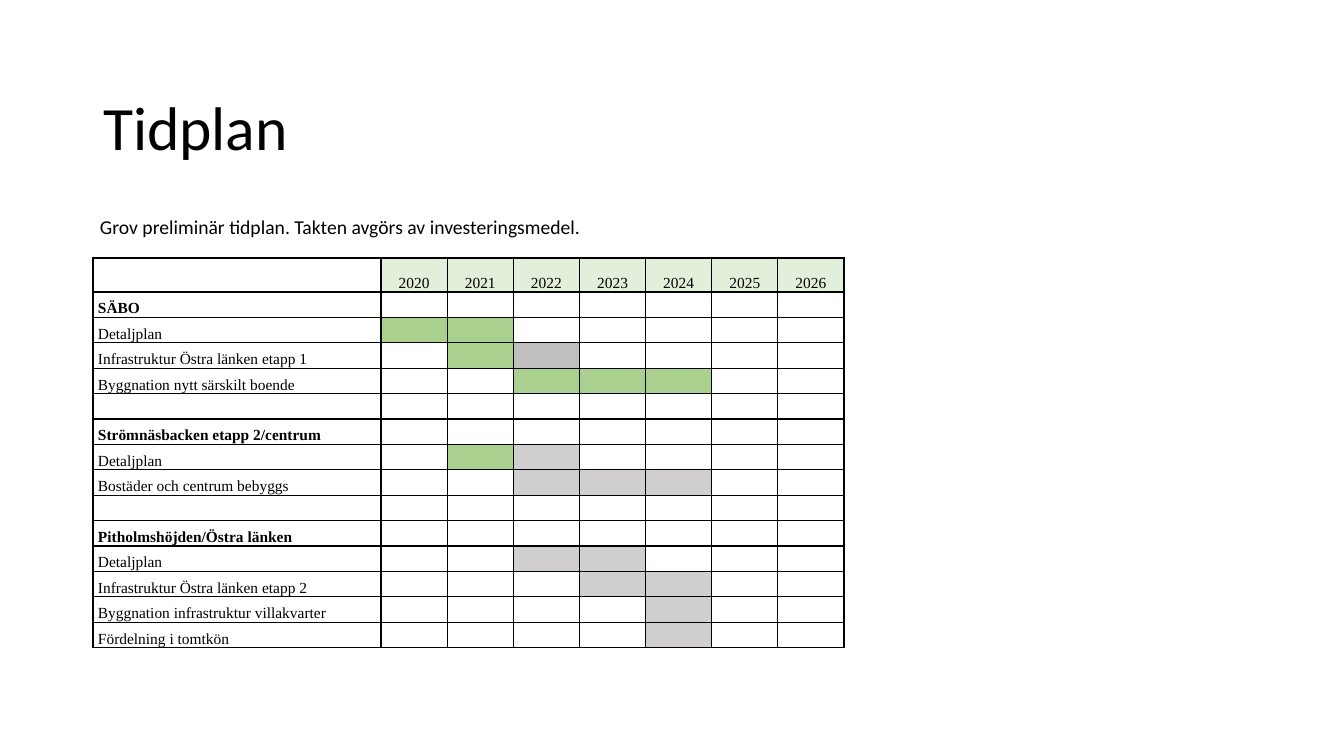
from dataclasses import dataclass

from lxml import etree
from pptx import Presentation
from pptx import util as u
from pptx.dml.color import RGBColor
from pptx.enum import text as t
from pptx.oxml import ns


@dataclass(frozen=True)
class Theme:
    ink: str = "000000"
    header: str = "E2EFDA"
    green: str = "A9D08E"
    gray: str = "BFBFBF"
    light: str = "D0CECE"
    sans: str = "Calibri"
    serif: str = "Times New Roman"
    title_size: int = 44
    intro_size: int = 14
    table_size: int = 11
    border: int = 1


THEME = Theme()
PX_PER_INCH = 100.8
YEARS = range(2020, 2027)
GREEN, GRAY, LIGHT = THEME.green, THEME.gray, THEME.light

# Each row: label, whether it is a heading, and the colour of each active year
SCHEDULE = [
    ("SÄBO", True, {}),
    ("Detaljplan", False, {2020: GREEN, 2021: GREEN}),
    ("Infrastruktur Östra länken etapp 1", False, {2021: GREEN, 2022: GRAY}),
    ("Byggnation nytt särskilt boende", False, {2022: GREEN, 2023: GREEN, 2024: GREEN}),
    ("", False, {}),
    ("Strömnäsbacken etapp 2/centrum", True, {}),
    ("Detaljplan", False, {2021: GREEN, 2022: LIGHT}),
    ("Bostäder och centrum bebyggs", False, {2022: LIGHT, 2023: LIGHT, 2024: LIGHT}),
    ("", False, {}),
    ("Pitholmshöjden/Östra länken", True, {}),
    ("Detaljplan", False, {2022: LIGHT, 2023: LIGHT}),
    ("Infrastruktur Östra länken etapp 2", False, {2023: LIGHT, 2024: LIGHT}),
    ("Byggnation infrastruktur villakvarter", False, {2024: LIGHT}),
    ("Fördelning i tomtkön", False, {2024: LIGHT}),
]


def px(length):
    return u.Emu(round(length * u.Inches(1) / PX_PER_INCH))


def write(frame, words, *, size, font, bold=False, align=t.PP_ALIGN.LEFT,
          spacing=1.15, after=10):
    """Put one formatted paragraph into a text frame."""
    para = frame.paragraphs[0]
    para.alignment = align
    para.line_spacing = spacing
    para.space_after = u.Pt(after)
    if not words:
        # The end mark keeps an empty cell from growing its row
        etree.SubElement(para._p, ns.qn("a:endParaRPr"), sz=str(size * 100))
        return
    span = para.add_run()
    span.text = words
    span.font.size = u.Pt(size)
    span.font.name = font
    span.font.bold = bold
    span.font.color.rgb = RGBColor.from_string(THEME.ink)


def add_borders(cell):
    props = cell._tc.get_or_add_tcPr()
    for place, side in enumerate(("lnL", "lnR", "lnT", "lnB")):
        line = etree.Element(ns.qn(f"a:{side}"), w=str(u.Pt(THEME.border)))
        fill = etree.SubElement(line, ns.qn("a:solidFill"))
        etree.SubElement(fill, ns.qn("a:srgbClr"), val=THEME.ink)
        props.insert(place, line)


def fill_cell(cell, words="", *, color=None, **style):
    cell.margin_left = cell.margin_right = px(5)
    cell.margin_top = cell.margin_bottom = 0
    cell.vertical_anchor = t.MSO_ANCHOR.BOTTOM
    if color:
        cell.fill.solid()
        cell.fill.fore_color.rgb = RGBColor.from_string(color)
    else:
        cell.fill.background()
    add_borders(cell)
    write(cell.text_frame, words, size=THEME.table_size, font=THEME.serif, **style)


def add_title(page, words):
    box = page.shapes.title
    box.left, box.top, box.width, box.height = px(93), px(58), px(1159), px(146)
    frame = box.text_frame
    frame.auto_size = t.MSO_AUTO_SIZE.NONE
    frame.vertical_anchor = t.MSO_ANCHOR.MIDDLE
    write(frame, words, size=THEME.title_size, font=THEME.sans, spacing=0.9, after=0)


def add_intro(page, words):
    box = page.shapes.add_textbox(px(90), px(206), px(897), px(124))
    frame = box.text_frame
    frame.word_wrap = True
    frame.auto_size = t.MSO_AUTO_SIZE.SHAPE_TO_FIT_TEXT
    write(frame, words, size=THEME.intro_size, font=THEME.sans)


def add_schedule(page):
    width, height, label_width, header_height = 751, 390, 288, 34
    table = page.shapes.add_table(len(SCHEDULE) + 1, len(YEARS) + 1,
                                  px(93), px(258), px(width), px(height)).table
    table.first_row = table.horz_banding = False

    # Equal year columns and equal body rows
    for index, column in enumerate(table.columns):
        column.width = px((width - label_width) / len(YEARS) if index else label_width)
    for index, row in enumerate(table.rows):
        row.height = px((height - header_height) / len(SCHEDULE) if index else header_height)

    # Header
    fill_cell(table.cell(0, 0))
    for column, year in enumerate(YEARS, 1):
        fill_cell(table.cell(0, column), str(year), color=THEME.header,
                  align=t.PP_ALIGN.CENTER)

    # Activities
    for row, (label, heading, active) in enumerate(SCHEDULE, 1):
        fill_cell(table.cell(row, 0), label, bold=heading)
        for column, year in enumerate(YEARS, 1):
            fill_cell(table.cell(row, column), color=active.get(year))


def main():
    deck = Presentation()
    deck.slide_width, deck.slide_height = u.Inches(13.33), u.Inches(7.5)
    page = deck.slides.add_slide(deck.slide_layouts.get_by_name("Title Only"))
    add_title(page, "Tidplan")
    add_schedule(page)
    add_intro(page, "Grov preliminär tidplan. Takten avgörs av investeringsmedel.")
    deck.save("out.pptx")


if __name__ == "__main__":
    main()
